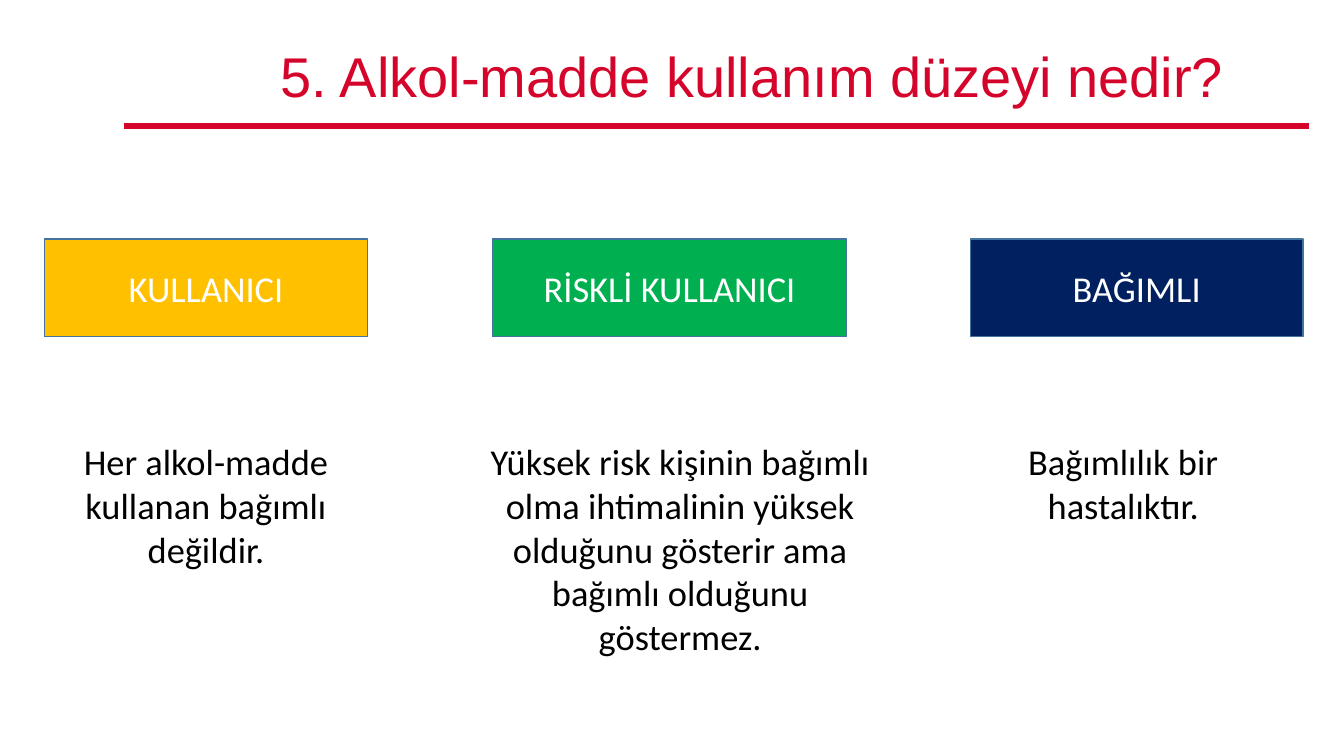
from lxml.etree import SubElement
from pptx import Presentation
from pptx.dml.color import RGBColor
from pptx.enum.shapes import MSO_CONNECTOR, MSO_SHAPE
from pptx.enum.text import MSO_ANCHOR, MSO_AUTO_SIZE, PP_ALIGN
from pptx.oxml.ns import qn
from pptx.util import Cm, Pt

RED = RGBColor(0xD5, 0x04, 0x2A)
AMBER = RGBColor(0xFF, 0xC0, 0x00)
GREEN = RGBColor(0x00, 0xB0, 0x50)
NAVY = RGBColor(0x00, 0x20, 0x60)
EDGE = RGBColor(0x43, 0x73, 0x9E)
WHITE = RGBColor(0xFF, 0xFF, 0xFF)
BLACK = RGBColor(0x00, 0x00, 0x00)

BOX_TOP, BOX_HIGH, NOTE_TOP = 6.02, 2.46, 10.95

# label, fill, box left and width, note, note left, width and height
LEVELS = [
    ("KULLANICI", AMBER, 1.12, 8.15,
     "Her alkol-madde kullanan bağımlı değildir.", 1.12, 8.15, 3.58),
    ("RİSKLİ KULLANICI", GREEN, 12.42, 8.92,
     "Yüksek risk kişinin bağımlı olma ihtimalinin yüksek "
     "olduğunu gösterir ama bağımlı olduğunu göstermez.", 11.61, 11.07, 5.82),
    ("BAĞIMLI", NAVY, 24.46, 8.38,
     "Bağımlılık bir hastalıktır.", 23.81, 9, 2.48),
]


class Deck:
    head = {"name": "Arial", "size": Pt(40), "bold": False}
    body = {"name": "Calibri", "size": Pt(26), "bold": False}

    def __init__(self):
        self.prs = Presentation()
        self.prs.slide_width, self.prs.slide_height = Cm(33.87), Cm(19.05)
        self.slide = self.prs.slides.add_slide(self.prs.slide_layouts[5])

    def label(self, shape, text, style, color, anchor):
        frame = shape.text_frame
        frame.word_wrap = True
        frame.vertical_anchor = anchor
        para = frame.paragraphs[0]
        para.text = text
        para.alignment = PP_ALIGN.CENTER
        for key, value in style.items():
            setattr(para.font, key, value)
        para.font.color.rgb = color
        return para

    def title(self, text, left, top, width, height):
        shape = self.slide.shapes.title
        place = {"left": left, "top": top, "width": width, "height": height}
        for key, value in place.items():
            setattr(shape, key, Cm(value))
        para = self.label(shape, text, self.head, RED, MSO_ANCHOR.MIDDLE)
        para.line_spacing = 0.9
        shape.text_frame.auto_size = MSO_AUTO_SIZE.NONE

    def rule(self, left, right, top):
        line = self.slide.shapes.add_connector(
            MSO_CONNECTOR.STRAIGHT, Cm(left), Cm(top), Cm(right), Cm(top))
        line.line.color.rgb = RED
        line.line.width = Pt(4.5)
        SubElement(line._element.spPr, qn("a:effectLst"))

    def box(self, text, fill, left, top, width, height):
        shape = self.slide.shapes.add_shape(
            MSO_SHAPE.FLOWCHART_PROCESS, Cm(left), Cm(top), Cm(width), Cm(height))
        shape.shadow.inherit = False
        shape.fill.solid()
        shape.fill.fore_color.rgb = fill
        shape.line.color.rgb = EDGE
        shape.line.width = Pt(1)
        self.label(shape, text, self.body, WHITE, MSO_ANCHOR.MIDDLE)

    def note(self, text, left, top, width, height):
        shape = self.slide.shapes.add_textbox(
            Cm(left), Cm(top), Cm(width), Cm(height))
        self.label(shape, text, self.body, BLACK, MSO_ANCHOR.TOP)
        shape.text_frame.auto_size = MSO_AUTO_SIZE.SHAPE_TO_FIT_TEXT


def main():
    deck = Deck()
    deck.rule(3.12, 32.99, 3.18)
    deck.title("5. Alkol-madde kullanım düzeyi nedir?", 4.34, 0.99, 29.21, 2.01)
    for label, fill, left, width, *_ in LEVELS:
        deck.box(label, fill, left, BOX_TOP, width, BOX_HIGH)
    for *_, text, left, width, height in LEVELS:
        deck.note(text, left, NOTE_TOP, width, height)
    deck.prs.save("out.pptx")


if __name__ == "__main__":
    main()
